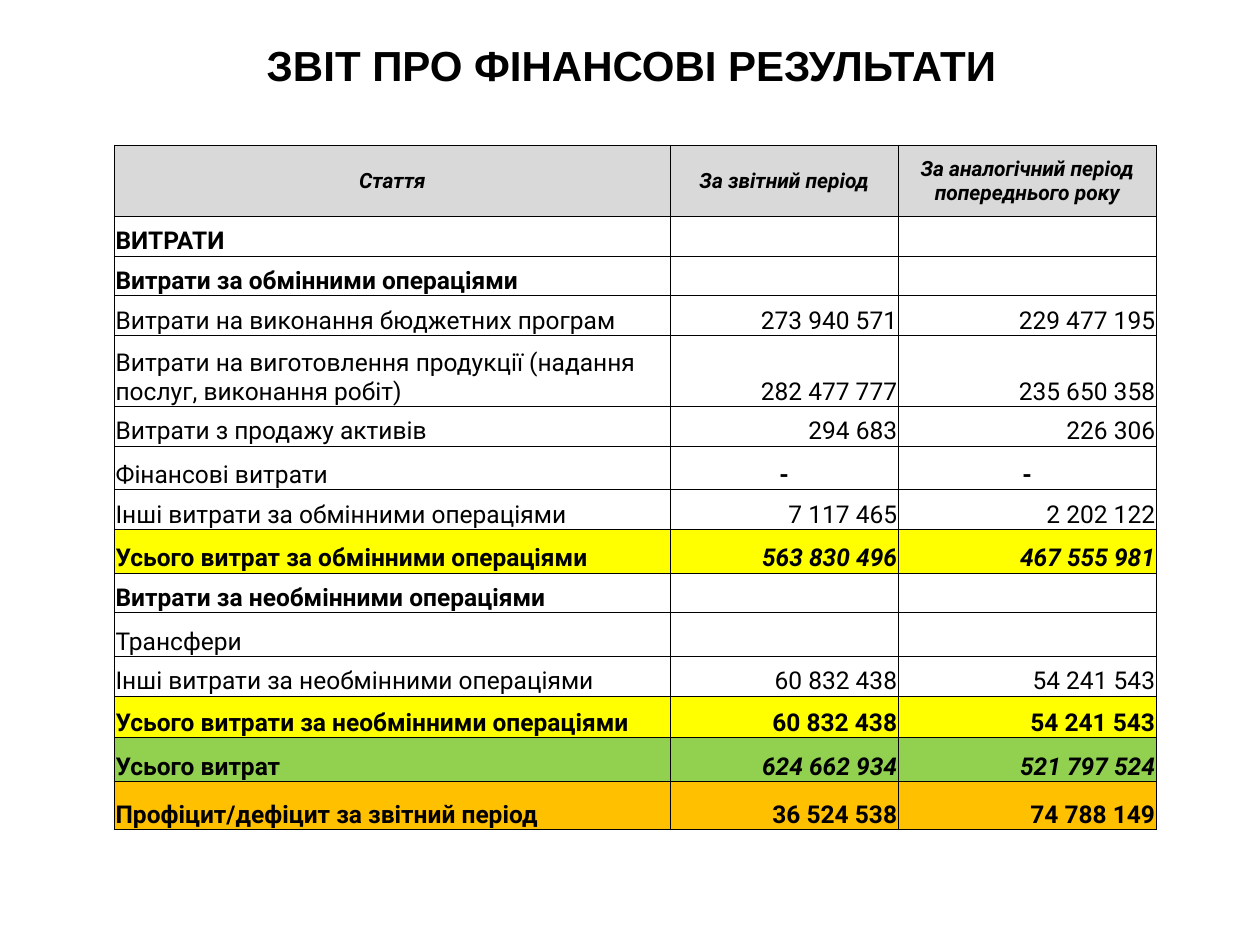
from lxml import etree
from pptx import Presentation
from pptx import util as u
from pptx.dml.color import RGBColor
from pptx.enum import text
from pptx.oxml.ns import qn

COLORS = {"text": "000000", "head": "D9D9D9", "subtotal": "FFFF00",
          "total": "92D050", "result": "FFC000"}
LEFT, CENTER, RIGHT = text.PP_ALIGN.LEFT, text.PP_ALIGN.CENTER, text.PP_ALIGN.RIGHT
MIDDLE, BOTTOM = text.MSO_ANCHOR.MIDDLE, text.MSO_ANCHOR.BOTTOM

# Text formats
BODY = {"name": "Roboto", "size": u.Pt(14), "bold": False, "italic": False}
BOLD = {**BODY, "bold": True}
BOLD_ITALIC = {**BOLD, "italic": True}
HEAD = {**BOLD_ITALIC, "size": u.Pt(12)}
TITLE = {"name": "Arial", "size": u.Pt(24), "bold": True}

# Label, values, row height in cm, label format, value format, fill
ROWS = [
    ("Стаття", ("За звітний період", "За аналогічний період попереднього року"),
     1.43, HEAD, HEAD, "head"),
    ("ВИТРАТИ", ("", ""), 0.8, BOLD, BODY, None),
    ("Витрати за обмінними операціями", ("", ""), 0.8, BOLD, BODY, None),
    ("Витрати на виконання бюджетних програм", ("273 940 571", "229 477 195"),
     0.8, BODY, BODY, None),
    ("Витрати на виготовлення продукції (надання послуг, виконання робіт)",
     ("282 477 777", "235 650 358"), 1.43, BODY, BODY, None),
    ("Витрати з продажу активів", ("294 683", "226 306"), 0.8, BODY, BODY, None),
    ("Фінансові витрати", ("-", "-"), 0.88, BODY, BOLD, None),
    ("Інші витрати за обмінними операціями", ("7 117 465", "2 202 122"),
     0.8, BODY, BODY, None),
    ("Усього витрат за обмінними операціями", ("563 830 496", "467 555 981"),
     0.88, BOLD, BOLD_ITALIC, "subtotal"),
    ("Витрати за необмінними операціями", ("", ""), 0.8, BOLD, BODY, None),
    ("Трансфери", ("", ""), 0.88, BODY, BODY, None),
    ("Інші витрати за необмінними операціями", ("60 832 438", "54 241 543"),
     0.8, BODY, BODY, None),
    ("Усього витрати за необмінними операціями", ("60 832 438", "54 241 543"),
     0.84, BOLD, BOLD, "subtotal"),
    ("Усього витрат", ("624 662 934", "521 797 524"),
     0.88, BOLD, BOLD_ITALIC, "total"),
    ("Профіцит/дефіцит за звітний період", ("36 524 538", "74 788 149"),
     0.97, BOLD, BOLD, "result"),
]
COLUMNS = [11.2, 4.6, 5.2]


class Report:
    def __init__(self, prs):
        self.s = prs.slides.add_slide(prs.slide_layouts[6])

    def add_text(self, p, words, fmt, align):
        p.alignment = align
        if not words:
            # An empty cell keeps the row low through its end mark
            etree.SubElement(p._p, qn("a:endParaRPr"), sz=str(int(fmt["size"].pt * 100)))
            return
        r = p.add_run()
        r.text = words
        for key, value in fmt.items():
            setattr(r.font, key, value)
        r.font.color.rgb = RGBColor.from_string(COLORS["text"])

    def title(self, words, left, top, width, height):
        sp = self.s.shapes.add_textbox(*map(u.Cm, (left, top, width, height)))
        tf = sp.text_frame
        tf.word_wrap = True
        tf.vertical_anchor = MIDDLE
        self.add_text(tf.paragraphs[0], words, TITLE, CENTER)

    def borders(self, cell):
        tcPr = cell._tc.get_or_add_tcPr()
        for i, side in enumerate(("lnL", "lnR", "lnT", "lnB")):
            ln = etree.Element(qn(f"a:{side}"), w=str(u.Pt(0.5)))
            fill = etree.SubElement(ln, qn("a:solidFill"))
            etree.SubElement(fill, qn("a:srgbClr"), val=COLORS["text"])
            tcPr.insert(i, ln)

    def cell(self, cell, words, fmt, align, anchor, fill):
        for side in ("left", "right", "top"):
            setattr(cell, f"margin_{side}", u.Cm(0.02))
        cell.margin_bottom = 0
        cell.vertical_anchor = anchor
        if fill:
            cell.fill.solid()
            cell.fill.fore_color.rgb = RGBColor.from_string(COLORS[fill])
        else:
            cell.fill.background()
        self.borders(cell)
        self.add_text(cell.text_frame.paragraphs[0], words, fmt, align)

    def table(self, rows, columns, left, top):
        height = sum(row[2] for row in rows)
        frame = self.s.shapes.add_table(
            len(rows), len(columns), *map(u.Cm, (left, top, sum(columns), height)))
        tbl = frame.table
        tbl.first_row = tbl.horz_banding = False
        for column, width in zip(tbl.columns, columns):
            column.width = u.Cm(width)
        for i, (label, values, row_height, label_fmt, value_fmt, fill) in enumerate(rows):
            tbl.rows[i].height = u.Cm(row_height)
            head = fill == "head"
            anchor = MIDDLE if head else BOTTOM
            self.cell(tbl.cell(i, 0), label, label_fmt, CENTER if head else LEFT, anchor, fill)
            for j, value in enumerate(values, 1):
                align = CENTER if head or value == "-" else RIGHT
                self.cell(tbl.cell(i, j), value, value_fmt, align, anchor, fill)


def main():
    prs = Presentation()
    prs.slide_width, prs.slide_height = u.Cm(25.4), u.Cm(19.05)
    report = Report(prs)
    # Heading
    report.title("ЗВІТ ПРО ФІНАНСОВІ РЕЗУЛЬТАТИ", 1.3, 0.53, 22.86, 1.55)
    # Statement of expenses
    report.table(ROWS, COLUMNS, 2.31, 2.93)
    prs.save("out.pptx")


if __name__ == "__main__":
    main()
